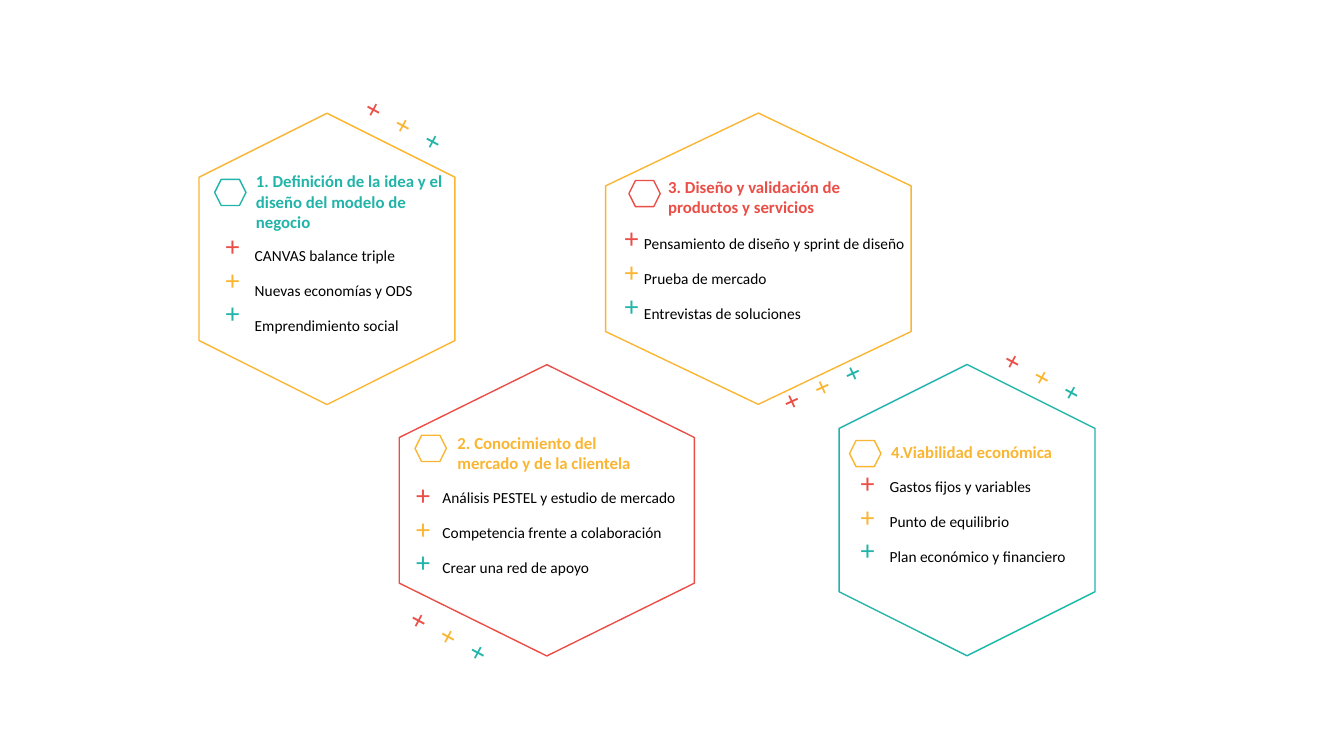
from dataclasses import dataclass

from pptx import Presentation
from pptx.dml.color import RGBColor
from pptx.enum.shapes import MSO_SHAPE as Preset
from pptx.enum.text import MSO_AUTO_SIZE as AutoSize, PP_ALIGN as Align
from pptx.util import Cm, Pt


@dataclass(frozen=True)
class Theme:
    font: str = "Calibri"
    red: RGBColor = RGBColor(0xEA, 0x4E, 0x46)
    yellow: RGBColor = RGBColor(0xFA, 0xB6, 0x32)
    teal: RGBColor = RGBColor(0x21, 0xB4, 0xA9)
    black: RGBColor = RGBColor(0, 0, 0)
    heading_size: int = 12
    item_size: int = 11
    plus_size: int = 20
    item_spacing: int = 25
    line_width: int = 1


THEME = Theme()
PLUS_COLORS = (THEME.red, THEME.yellow, THEME.teal)
LIST_HEIGHT = 2.82
HEXAGON_LENGTH = 7.34
BADGE_SIZE = (0.79, 0.66)


@dataclass(frozen=True)
class Stage:
    """One hexagon with its contents; all lengths are in centimetres."""
    title: str
    items: tuple
    title_color: RGBColor
    outline: RGBColor
    hexagon: tuple      # left, top, breadth before the quarter turn
    badge: tuple        # left, top
    title_box: tuple    # left, top, width, height
    item_box: tuple     # left, top, width
    plus_column: tuple  # left, top
    plus_trail: tuple   # left, top, rotation
    title_align: Align = Align.LEFT


STAGES = (
    Stage("1. Definición de la idea y el diseño del modelo de negocio",
          ("CANVAS balance triple", "Nuevas economías y ODS", "Emprendimiento social"),
          THEME.teal, THEME.yellow,
          hexagon=(4.57, 3.3, 6.45), badge=(5.41, 4.52),
          title_box=(6.2, 4.19, 5.28, 1.8), item_box=(6.17, 5.66, 5),
          plus_column=(5.44, 5.64), plus_trail=(9.63, 1.65, 298.4)),
    Stage("2. Conocimiento del mercado y de la clientela",
          ("Análisis PESTEL y estudio de mercado", "Competencia frente a colaboración",
           "Crear una red de apoyo"),
          THEME.yellow, THEME.red,
          hexagon=(10.11, 9.14, 7.44), badge=(10.46, 10.97),
          title_box=(11.28, 10.77, 5.33, 1.27), item_box=(10.9, 11.76, 7.44),
          plus_column=(10.24, 11.91), plus_trail=(10.77, 14.53, 298.4)),
    Stage("3. Diseño y validación de productos y servicios",
          ("Pensamiento de diseño y sprint de diseño", "Prueba de mercado",
           "Entrevistas de soluciones"),
          THEME.red, THEME.yellow,
          hexagon=(15.44, 2.67, 7.7), badge=(15.85, 4.55),
          title_box=(16.59, 4.32, 5.41, 1.27), item_box=(15.98, 5.36, 8.51),
          plus_column=(15.49, 5.44), plus_trail=(20.09, 8.28, 245.2)),
    Stage("4.Viabilidad económica",
          ("Gastos fijos y variables", "Punto de equilibrio", "Plan económico y financiero"),
          THEME.yellow, THEME.teal,
          hexagon=(20.7, 9.63, 6.45), badge=(21.41, 11.1),
          title_box=(21.31, 11, 5.46, 0.76), item_box=(22.17, 11.48, 6.65),
          plus_column=(21.44, 11.61), plus_trail=(25.73, 7.98, 298.4),
          title_align=Align.RIGHT),
)


def add_hexagon(slide, left, top, width, height, color, rotation=0):
    shape = slide.shapes.add_shape(Preset.HEXAGON, Cm(left), Cm(top), Cm(width), Cm(height))
    shape.rotation = rotation
    shape.shadow.inherit = False
    shape.fill.background()
    shape.line.color.rgb = color
    shape.line.width = Pt(THEME.line_width)


def add_text_box(slide, left, top, width, height):
    box = slide.shapes.add_textbox(Cm(left), Cm(top), Cm(width), Cm(height))
    box.text_frame.word_wrap = True
    box.text_frame.auto_size = AutoSize.SHAPE_TO_FIT_TEXT
    return box


def add_run(paragraph, text, size, color, bold=False):
    run = paragraph.add_run()
    run.text = text
    run.font.name = THEME.font
    run.font.size = Pt(size)
    run.font.bold = bold
    run.font.color.rgb = color


def add_title(slide, stage):
    paragraph = add_text_box(slide, *stage.title_box).text_frame.paragraphs[0]
    paragraph.alignment = stage.title_align
    add_run(paragraph, stage.title, THEME.heading_size, stage.title_color, bold=True)


def add_items(slide, stage):
    frame = add_text_box(slide, *stage.item_box, LIST_HEIGHT).text_frame
    for index, item in enumerate(stage.items):
        paragraph = frame.add_paragraph() if index else frame.paragraphs[0]
        paragraph.line_spacing = Pt(THEME.item_spacing)
        add_run(paragraph, item, THEME.item_size, THEME.black)


def add_pluses(slide, left, top, rotation=0, width=1.09):
    # The box is narrow enough to wrap after every plus sign
    box = add_text_box(slide, left, top, width, LIST_HEIGHT)
    box.rotation = rotation
    for color in PLUS_COLORS:
        add_run(box.text_frame.paragraphs[0], "+", THEME.plus_size, color)


def add_stage(slide, stage):
    # Outline and badge
    add_hexagon(slide, *stage.hexagon[:2], HEXAGON_LENGTH, stage.hexagon[2],
                stage.outline, rotation=90)
    add_hexagon(slide, *stage.badge, *BADGE_SIZE, stage.title_color)
    # Text
    add_title(slide, stage)
    add_items(slide, stage)
    # Plus signs beside the list and along the outline
    add_pluses(slide, *stage.plus_column, width=0.76)
    add_pluses(slide, *stage.plus_trail)


def main():
    presentation = Presentation()
    presentation.slide_width = Cm(33.87)
    presentation.slide_height = Cm(19.05)
    slide = presentation.slides.add_slide(presentation.slide_layouts[6])
    for stage in STAGES:
        add_stage(slide, stage)
    presentation.save("out.pptx")


if __name__ == "__main__":
    main()
